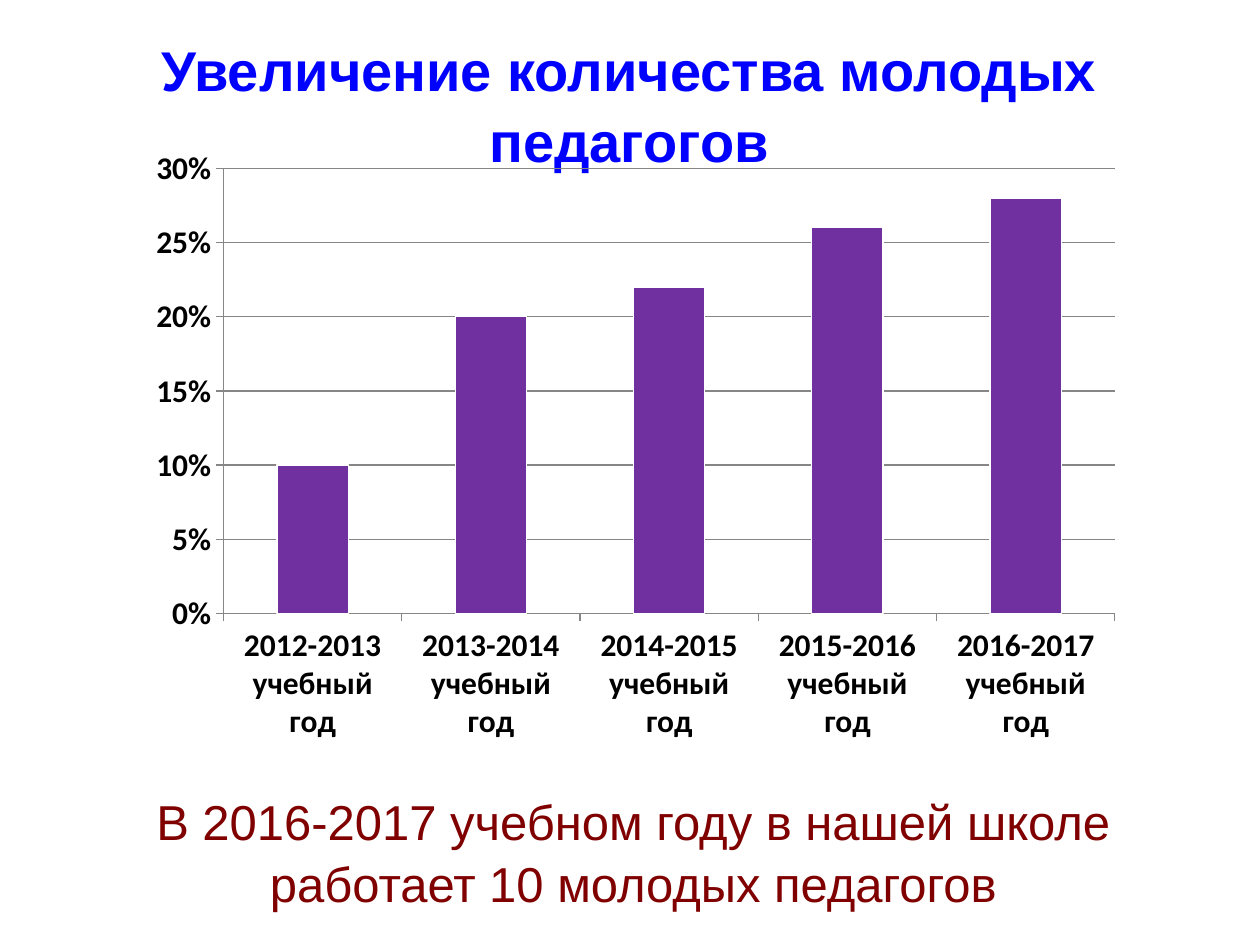
from dataclasses import dataclass

from lxml import etree
from pptx import Presentation
from pptx.chart.data import CategoryChartData
from pptx.dml.color import RGBColor
from pptx.enum.chart import XL_CHART_TYPE, XL_TICK_MARK
from pptx.enum.text import MSO_ANCHOR, MSO_AUTO_SIZE, PP_ALIGN
from pptx.oxml.ns import qn
from pptx.util import Cm, Pt

COLUMNS = XL_CHART_TYPE.COLUMN_CLUSTERED
TICK_OUTSIDE = XL_TICK_MARK.OUTSIDE
TICK_NONE = XL_TICK_MARK.NONE
TOP = MSO_ANCHOR.TOP
NO_FIT = MSO_AUTO_SIZE.NONE
CENTER = PP_ALIGN.CENTER


@dataclass(frozen=True)
class Theme:
    """Colours, fonts and type sizes of the slide."""
    title: RGBColor = RGBColor(0x00, 0x00, 0xFF)
    note: RGBColor = RGBColor(0x80, 0x00, 0x00)
    column: RGBColor = RGBColor(0x70, 0x30, 0xA0)
    outline: RGBColor = RGBColor(0xFF, 0xFF, 0xFF)
    axis: RGBColor = RGBColor(0x86, 0x86, 0x86)
    label: RGBColor = RGBColor(0x00, 0x00, 0x00)
    text_font: str = "Arial"
    chart_font: str = "Calibri"
    title_size: Pt = Pt(32)
    note_size: Pt = Pt(28)
    label_size: Pt = Pt(18)


THEME = Theme()
TITLE = "Увеличение количества молодых педагогов"
NOTE = "В 2016-2017 учебном году в нашей школе работает 10 молодых педагогов"
FIRST_YEAR = 2012
SHARES = (0.1, 0.2, 0.22, 0.26, 0.28)
PLOT_LAYOUT = {"x": 0.09, "y": 0.05, "w": 0.89, "h": 0.72}


def place(shape, left, top, width, height):
    """Move and size a shape, in centimetres."""
    shape.left, shape.top = Cm(left), Cm(top)
    shape.width, shape.height = Cm(width), Cm(height)


def set_text(shape, text, size, color, bold=False):
    """Write one centred paragraph into a shape."""
    frame = shape.text_frame
    frame.text = text
    frame.word_wrap = True
    frame.auto_size = NO_FIT
    frame.vertical_anchor = TOP
    paragraph = frame.paragraphs[0]
    paragraph.alignment = CENTER
    paragraph.line_spacing = 1.05
    paragraph.space_before = Pt(0)
    font = paragraph.font
    font.name, font.size, font.bold = THEME.text_font, size, bold
    font.color.rgb = color


def add_title(slide):
    """Fill the title placeholder."""
    title = slide.shapes.title
    place(title, 0.86, 0.53, 23.65, 3)
    set_text(title, TITLE, THEME.title_size, THEME.title, bold=True)


def add_note(slide):
    """Add the closing statement below the chart."""
    note = slide.shapes.add_textbox(Cm(0.94), Cm(15.77), Cm(23.65), Cm(2.64))
    set_text(note, NOTE, THEME.note_size, THEME.note)


def style_line(line, color):
    """Give a line the thin chart stroke."""
    line.color.rgb = color
    line.width = Pt(0.75)


def style_axis(axis):
    """Apply the shared look to a chart axis."""
    axis.major_tick_mark = TICK_OUTSIDE
    axis.minor_tick_mark = TICK_NONE
    axis.tick_labels.font.bold = True
    style_line(axis.format.line, THEME.axis)


def set_plot_layout(chart):
    """Fix the inner plot area as fractions of the chart."""
    area = chart.element.find(".//" + qn("c:plotArea"))
    for layout in area.findall(qn("c:layout")):
        area.remove(layout)
    layout = etree.Element(qn("c:layout"))
    manual = etree.SubElement(layout, qn("c:manualLayout"))
    settings = {"layoutTarget": "inner", "xMode": "edge", "yMode": "edge", **PLOT_LAYOUT}
    for name, value in settings.items():
        etree.SubElement(manual, qn("c:" + name)).set("val", str(value))
    area.insert(0, layout)


def add_share_chart(slide):
    """Add the column chart of young teachers by school year."""
    data = CategoryChartData(number_format="0%")
    data.categories = [
        f"{year}-{year + 1} учебный год"
        for year in range(FIRST_YEAR, FIRST_YEAR + len(SHARES))
    ]
    data.add_series("Series 1", SHARES)
    frame = slide.shapes.add_chart(COLUMNS, Cm(2.69), Cm(2.77), Cm(20.19), Cm(12.47), data)
    chart = frame.chart
    chart.has_legend = False
    chart.has_title = False
    chart.font.name, chart.font.size = THEME.chart_font, THEME.label_size
    chart.font.color.rgb = THEME.label
    set_plot_layout(chart)

    style_axis(chart.category_axis)
    value_axis = chart.value_axis
    style_axis(value_axis)
    value_axis.minimum_scale, value_axis.maximum_scale = 0, 0.3
    value_axis.major_unit = 0.05
    value_axis.tick_labels.number_format = "0%"
    value_axis.tick_labels.number_format_is_linked = False
    value_axis.has_major_gridlines = True
    style_line(value_axis.major_gridlines.format.line, THEME.axis)

    plot = chart.plots[0]
    plot.gap_width = 150
    plot.vary_by_categories = False
    columns = plot.series[0].format
    columns.fill.solid()
    columns.fill.fore_color.rgb = THEME.column
    style_line(columns.line, THEME.outline)


def main():
    """Build and save the slide."""
    presentation = Presentation()
    presentation.slide_width, presentation.slide_height = Cm(25.4), Cm(19.05)
    slide = presentation.slides.add_slide(presentation.slide_layouts[5])
    add_title(slide)
    add_note(slide)
    add_share_chart(slide)
    presentation.save("out.pptx")


if __name__ == "__main__":
    main()
